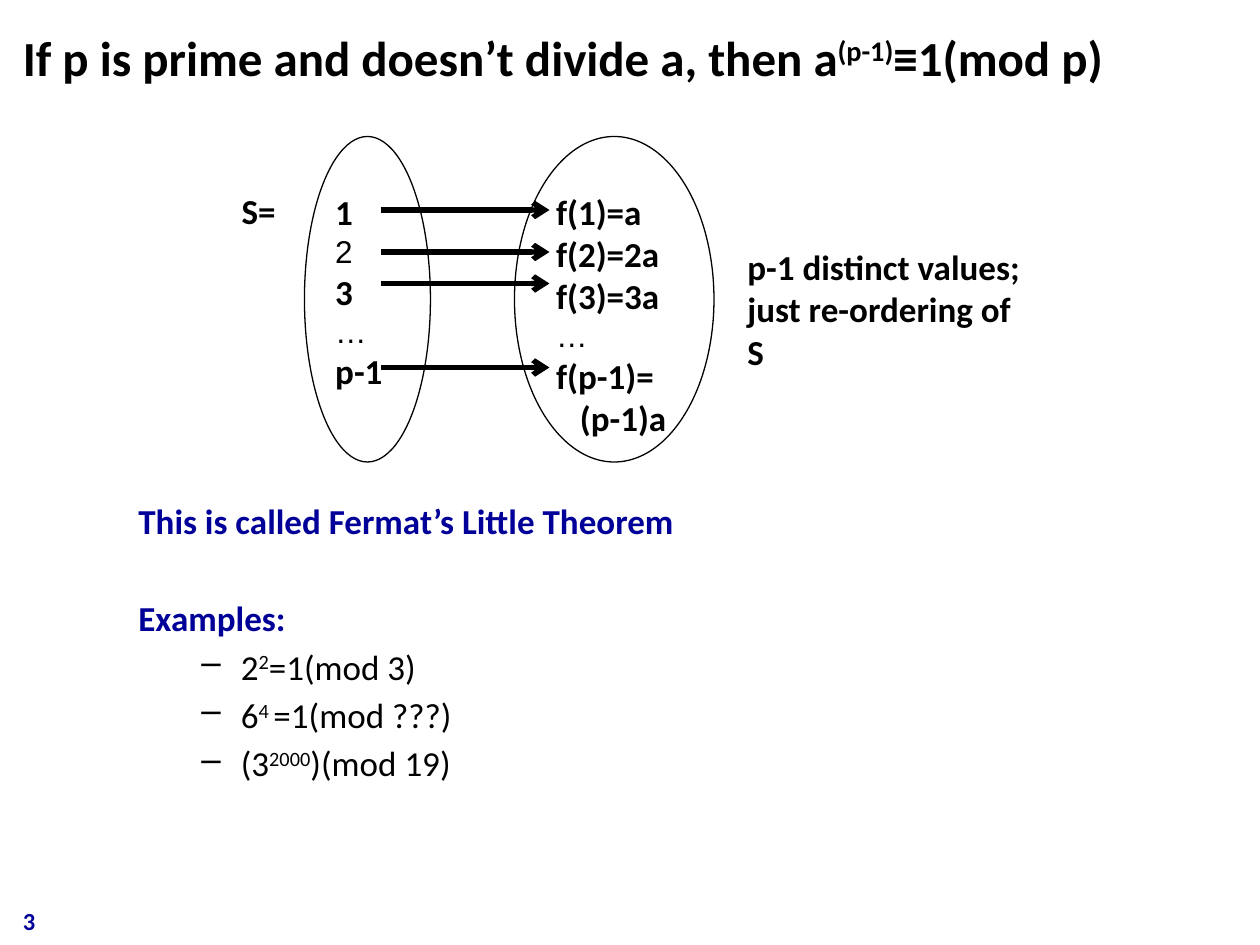
from dataclasses import dataclass

from lxml import etree
from pptx import Presentation
from pptx import util as u
from pptx.dml.color import RGBColor
from pptx.enum import shapes, text
from pptx.oxml import ns

BLACK = RGBColor(0x00, 0x00, 0x00)
WHITE = RGBColor(0xFF, 0xFF, 0xFF)
NAVY = RGBColor(0x00, 0x00, 0x99)
Pt = u.Pt


@dataclass(frozen=True)
class Span:
    words: str
    size: float = 20
    bold: bool = True
    color: RGBColor = BLACK
    font: str = "Calibri"
    raised: bool = False


@dataclass(frozen=True)
class Line:
    spans: tuple[Span, ...]
    before: float = 0
    indent: float = 0
    bullet: bool = False


@dataclass(frozen=True)
class Area:
    left: float
    top: float
    width: float
    height: float

    def lengths(self) -> tuple:
        return tuple(Pt(n) for n in (self.left, self.top, self.width, self.height))


def plain(words: str, **look) -> Line:
    return Line((Span(words, **look),))


def small(words: str) -> Line:
    return plain(words, size=18, bold=False, font="Arial")


def example(base: str, power: str, rest: str) -> Line:
    spans = (Span(base, bold=False), Span(power, bold=False, raised=True),
             Span(rest, bold=False))
    return Line(spans, before=3.6, indent=58.5, bullet=True)


def write(frame, lines: list[Line], wrap: bool = True,
          anchor=text.MSO_ANCHOR.TOP) -> None:
    frame.word_wrap = wrap
    frame.vertical_anchor = anchor
    for index, line in enumerate(lines):
        para = frame.add_paragraph() if index else frame.paragraphs[0]
        para.alignment = text.PP_ALIGN.LEFT
        para.space_before = Pt(line.before)
        props = para._p.get_or_add_pPr()
        if line.indent:
            props.set("marL", str(Pt(line.indent)))
        if line.bullet:
            props.set("indent", str(Pt(-22.5)))
            etree.SubElement(props, ns.qn("a:buChar")).set("char", "–")
        for part in line.spans:
            span = para.add_run()
            span.text = part.words
            look = {"size": Pt(part.size), "bold": part.bold, "name": part.font}
            for name, value in look.items():
                setattr(span.font, name, value)
            span.font.color.rgb = part.color
            if part.raised:
                span._r.get_or_add_rPr().set("baseline", "30000")


def add_text(page, area: Area, lines: list[Line], **layout) -> None:
    box = page.shapes.add_textbox(*area.lengths())
    write(box.text_frame, lines, **layout)


def add_set(page, area: Area, lines: list[Line]) -> None:
    """Draw an oval that lists the members of a set."""
    oval = page.shapes.add_shape(shapes.MSO_SHAPE.OVAL, *area.lengths())
    oval.shadow.inherit = False
    oval.fill.solid()
    oval.fill.fore_color.rgb = WHITE
    oval.line.color.rgb = BLACK
    oval.line.width = Pt(0.75)
    write(oval.text_frame, lines)


def add_arrow(page, left: float, right: float, y: float) -> None:
    arrow = page.shapes.add_connector(
        shapes.MSO_CONNECTOR.STRAIGHT, Pt(left), Pt(y), Pt(right), Pt(y))
    arrow.line.color.rgb = BLACK
    arrow.line.width = Pt(3)
    etree.SubElement(arrow.line._get_or_add_ln(), ns.qn("a:tailEnd")).set("type", "arrow")
    etree.SubElement(arrow._element.spPr, ns.qn("a:effectLst"))


def main() -> None:
    deck = Presentation()
    deck.slide_width, deck.slide_height = Pt(720), Pt(540)
    page = deck.slides.add_slide(deck.slide_layouts[6])

    title = Line((
        Span("If p is prime and doesn’t divide a, then a", size=28),
        Span("(p-1)", size=28, raised=True),
        Span("≡1(mod p)", size=28),
    ))
    add_text(page, Area(6, 12, 711, 41), [title], anchor=text.MSO_ANCHOR.MIDDLE)

    add_text(page, Area(72, 282, 384, 177), [
        plain("This is called Fermat’s Little Theorem", color=NAVY),
        Line((Span("Examples:", color=NAVY),), before=31.6),
        example("2", "2", "=1(mod 3)"),
        example("6", "4 ", "=1(mod ???)"),
        example("(3", "2000", ")(mod 19)"),
    ])
    add_text(page, Area(6, 497, 168, 41), [plain("3", size=14, color=NAVY)],
             anchor=text.MSO_ANCHOR.BOTTOM)

    add_set(page, Area(174, 78, 72, 186), [
        plain("1"), small("2"), plain("3"), small("…"), plain("p-1")])
    add_text(page, Area(131, 105, 37.5, 29), [plain("S=")], wrap=False)
    add_set(page, Area(294, 78, 114, 186), [
        plain("f(1)=a"), plain("f(2)=2a"), plain("f(3)=3a"), small("…"),
        plain("f(p-1)="), Line((Span("(p-1)a"),), indent=13.6)])
    for y in (120, 144, 162, 210):
        add_arrow(page, 218, 314, y)

    add_text(page, Area(420, 137, 174, 51),
             [plain("p-1 distinct values; just re-ordering of S")])
    deck.save("out.pptx")


if __name__ == "__main__":
    main()
